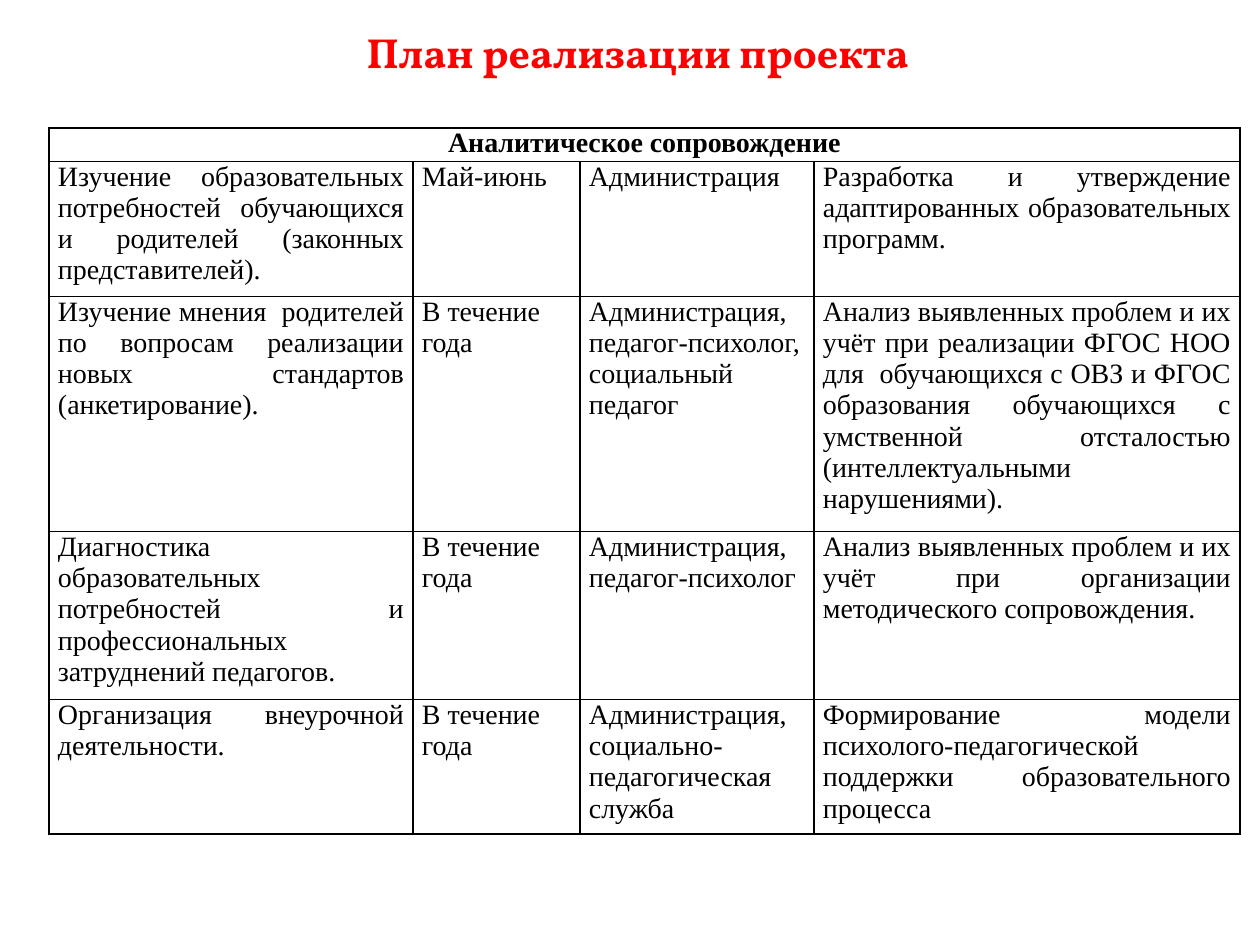
from dataclasses import dataclass

from lxml.etree import SubElement
from pptx import Presentation
from pptx.dml.color import RGBColor as RGB
from pptx.enum.text import MSO_ANCHOR as Anchor, MSO_AUTO_SIZE as AutoSize, PP_ALIGN as Align
from pptx.oxml.ns import qn
from pptx.util import Pt

PX = 914400 / 126  # EMU in one px


def px(n):
    return round(n * PX)


@dataclass(frozen=True)
class Theme:
    title_font: str = "Vollkorn"
    body_font: str = "Times New Roman"
    title_size: int = 24
    body_size: int = 16
    title_color: str = "FF0000"
    text_color: str = "000000"
    border_color: str = "000000"
    border_width: int = 1


class SlideBuilder:
    def __init__(self, prs, theme):
        self.theme = theme
        self.s = prs.slides.add_slide(prs.slide_layouts[5])

    def style(self, p, font, size, color, bold, align):
        p.alignment = align
        for r in p.runs:
            r.font.name, r.font.size, r.font.bold = font, Pt(size), bold
            r.font.color.rgb = RGB.from_string(color)

    def title(self, text, x, y, w, h):
        t = self.theme
        sp = self.s.shapes.title
        sp.left, sp.top, sp.width, sp.height = map(px, (x, y, w, h))
        tf = sp.text_frame
        tf.text = text
        tf.word_wrap = False
        tf.auto_size = AutoSize.SHAPE_TO_FIT_TEXT
        tf.vertical_anchor = Anchor.MIDDLE
        self.style(tf.paragraphs[0], t.title_font, t.title_size, t.title_color, True, Align.LEFT)

    def borders(self, cell):
        tc_pr = cell._tc.get_or_add_tcPr()
        for i, side in enumerate(("lnL", "lnR", "lnT", "lnB")):
            ln = SubElement(tc_pr, qn(f"a:{side}"), w=str(Pt(self.theme.border_width)))
            fill = SubElement(ln, qn("a:solidFill"))
            SubElement(fill, qn("a:srgbClr"), val=self.theme.border_color)
            tc_pr.insert(i, ln)  # borders come before the fill

    def cell(self, cell, text, align, bold=False):
        t = self.theme
        cell.text = text
        cell.margin_left = cell.margin_right = px(9)
        cell.margin_top = cell.margin_bottom = 0
        self.style(cell.text_frame.paragraphs[0], t.body_font, t.body_size, t.text_color, bold, align)

    def table(self, heading, rows, aligns, x, y, widths, heights):
        tbl = self.s.shapes.add_table(
            len(heights), len(widths), px(x), px(y), px(sum(widths)), px(sum(heights))).table
        tbl.first_row = tbl.horz_banding = False
        for col, w in zip(tbl.columns, widths):
            col.width = px(w)
        for row, h in zip(tbl.rows, heights):
            row.height = px(h)
        for cell in tbl.iter_cells():
            cell.fill.background()
            self.borders(cell)
        # Heading across all columns
        tbl.cell(0, 0).merge(tbl.cell(0, len(widths) - 1))
        self.cell(tbl.cell(0, 0), heading, Align.CENTER, bold=True)
        # Body rows
        for i, texts in enumerate(rows, 1):
            for j, (text, align) in enumerate(zip(texts, aligns)):
                self.cell(tbl.cell(i, j), text, align)


HEADING = "Аналитическое сопровождение"
ALL_YEAR = "В течение года"
# Activity, term, responsible, result
PLAN = [
    ("Изучение образовательных потребностей обучающихся и родителей (законных представителей).",
     "Май-июнь",
     "Администрация",
     "Разработка и утверждение адаптированных образовательных программ."),
    ("Изучение мнения  родителей по вопросам реализации новых стандартов (анкетирование).",
     ALL_YEAR,
     "Администрация, педагог-психолог, социальный педагог",
     "Анализ выявленных проблем и их учёт при реализации ФГОС НОО для  обучающихся с ОВЗ "
     "и ФГОС образования обучающихся с умственной отсталостью "
     "(интеллектуальными нарушениями)."),
    ("Диагностика образовательных потребностей и профессиональных затруднений педагогов.",
     ALL_YEAR,
     "Администрация, педагог-психолог",
     "Анализ выявленных проблем и их учёт при организации методического сопровождения."),
    ("Организация внеурочной деятельности.",
     ALL_YEAR,
     "Администрация, социально-педагогическая служба",
     "Формирование модели психолого-педагогической поддержки образовательного процесса"),
]


def main():
    prs = Presentation()
    prs.slide_width, prs.slide_height = px(1260), px(945)
    slide = SlideBuilder(prs, Theme())

    # Title
    slide.title("План реализации проекта", 354, 20, 593, 63)

    # Plan table
    slide.table(HEADING, PLAN, (Align.JUSTIFY, Align.LEFT, Align.LEFT, Align.JUSTIFY), 49, 128,
                widths=(364, 167, 234, 426), heights=(33, 135, 235, 168, 134))

    prs.save("out.pptx")


if __name__ == "__main__":
    main()
